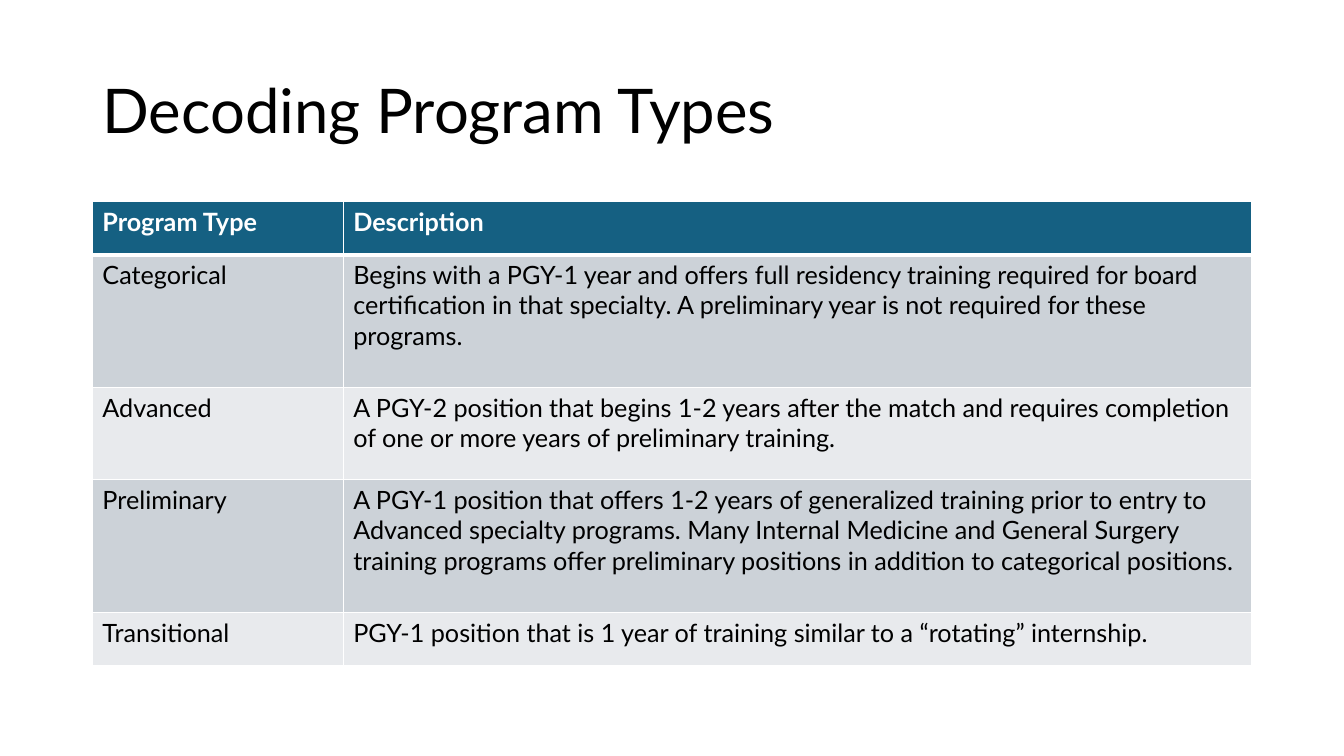
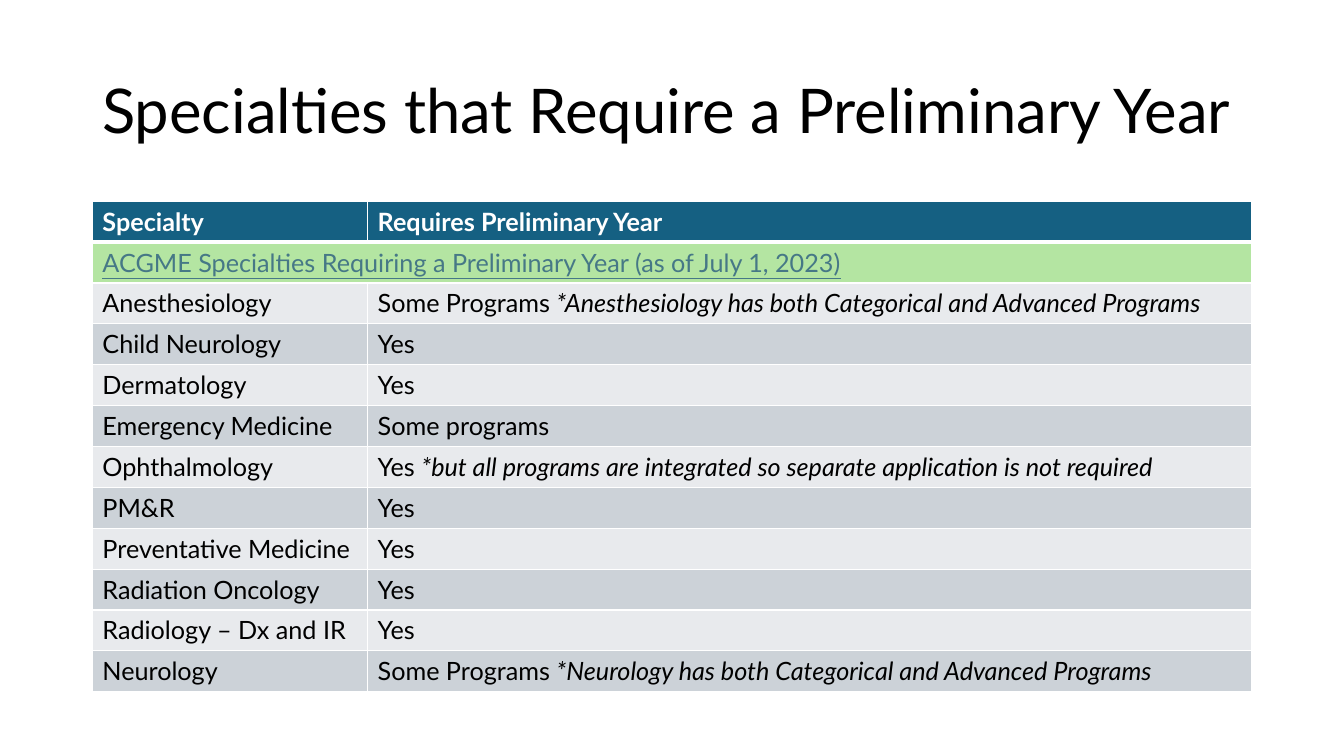
from dataclasses import dataclass

from lxml import etree
from pptx import Presentation
from pptx import util as u
from pptx.dml.color import RGBColor
from pptx.enum import text
from pptx.oxml import ns

BLACK = RGBColor(0x00, 0x00, 0x00)
WHITE = RGBColor(0xFF, 0xFF, 0xFF)
HEADER_BLUE = RGBColor(0x15, 0x60, 0x82)
BAND_DARK = RGBColor(0xCC, 0xD2, 0xD8)
BAND_LIGHT = RGBColor(0xE8, 0xEA, 0xED)
NOTE_GREEN = RGBColor(0xB4, 0xE5, 0xA2)
LINK_TEAL = RGBColor(0x46, 0x78, 0x86)

FONT = "Lato"
LEFT, WIDTH = 66, 828
TITLE_TOP, TITLE_HEIGHT = 28.75, 104.4
TABLE_TOP = 143.75
THIN, THICK = 1, 3

TITLE_STYLE = {"name": FONT, "size": u.Pt(44)}
BODY_STYLE = {"name": FONT, "size": u.Pt(18), "bold": False}
HEADER_STYLE = BODY_STYLE | {"bold": True}
LINK_STYLE = BODY_STYLE | {"underline": True}


@dataclass(frozen=True)
class TableSlide:
    """A titled table; a row with a single text spans all columns."""
    title: str
    first_column: float
    row_heights: list[float]
    rows: list[tuple[str, ...]]


PROGRAM_TYPES = TableSlide(
    "Decoding Program Types", 179.2, [38.2, 94.6, 66.2, 94.6, 38.2],
    [
        ("Program Type", "Description"),
        ("Categorical",
         "Begins with a PGY-1 year and offers full residency training required for board "
         "certification in that specialty. A preliminary year is not required for these "
         "programs."),
        ("Advanced",
         "A PGY-2 position that begins 1-2 years after the match and requires completion "
         "of one or more years of preliminary training."),
        ("Preliminary",
         "A PGY-1 position that offers 1-2 years of generalized training prior to entry to "
         "Advanced specialty programs. Many Internal Medicine and General Surgery "
         "training programs offer preliminary positions in addition to categorical positions."),
        ("Transitional",
         "PGY-1 position that is 1 year of training similar to a “rotating” internship."),
    ])

SPECIALTIES = TableSlide(
    "Specialties that Require a Preliminary Year", 196.6, [29.2] * 12,
    [
        ("Specialty", "Requires Preliminary Year"),
        ("ACGME Specialties Requiring a Preliminary Year (as of July 1, 2023)",),
        ("Anesthesiology",
         "Some Programs *Anesthesiology has both Categorical and Advanced Programs"),
        ("Child Neurology", "Yes"),
        ("Dermatology", "Yes"),
        ("Emergency Medicine", "Some programs"),
        ("Ophthalmology",
         "Yes *but all programs are integrated so separate application is not required"),
        ("PM&R", "Yes"),
        ("Preventative Medicine", "Yes"),
        ("Radiation Oncology", "Yes"),
        ("Radiology – Dx and IR", "Yes"),
        ("Neurology", "Some Programs *Neurology has both Categorical and Advanced Programs"),
    ])


def add_run(paragraph, words: str, style: dict, color: RGBColor, italic: bool = False) -> None:
    run = paragraph.add_run()
    run.text = words
    for name, value in (style | {"italic": italic}).items():
        setattr(run.font, name, value)
    run.font.color.rgb = color


def add_title(slide, title: str) -> None:
    box = slide.shapes.add_textbox(
        u.Pt(LEFT), u.Pt(TITLE_TOP), u.Pt(WIDTH), u.Pt(TITLE_HEIGHT))
    frame = box.text_frame
    frame.word_wrap = True
    frame.vertical_anchor = text.MSO_ANCHOR.MIDDLE
    paragraph = frame.paragraphs[0]
    paragraph.line_spacing = 0.9
    add_run(paragraph, title, TITLE_STYLE, BLACK)


def set_borders(cell, top: float, bottom: float) -> None:
    properties = cell._tc.get_or_add_tcPr()
    for side, width in {"L": THIN, "R": THIN, "T": top, "B": bottom}.items():
        line = etree.SubElement(properties, ns.qn(f"a:ln{side}"), w=str(u.Pt(width)))
        fill = etree.SubElement(line, ns.qn("a:solidFill"))
        etree.SubElement(fill, ns.qn("a:srgbClr"), val=str(WHITE))


def row_look(index: int, spans: bool) -> tuple[RGBColor, RGBColor, dict]:
    """Return fill, text colour and font style of a row."""
    if index == 0:
        return HEADER_BLUE, WHITE, HEADER_STYLE
    if spans:
        return NOTE_GREEN, LINK_TEAL, LINK_STYLE
    return (BAND_DARK if index % 2 else BAND_LIGHT), BLACK, BODY_STYLE


def add_table(slide, content: TableSlide) -> None:
    table = slide.shapes.add_table(
        len(content.rows), 2, u.Pt(LEFT), u.Pt(TABLE_TOP),
        u.Pt(WIDTH), u.Pt(sum(content.row_heights))).table
    table.horz_banding = False
    table.columns[0].width = u.Pt(content.first_column)
    table.columns[1].width = u.Pt(WIDTH - content.first_column)
    for index, (height, texts) in enumerate(zip(content.row_heights, content.rows)):
        row = table.rows[index]
        row.height = u.Pt(height)
        spans = len(texts) == 1
        fill, color, style = row_look(index, spans)
        for cell in row.cells:
            set_borders(cell, THICK if index == 1 else THIN, THICK if index == 0 else THIN)
            cell.fill.solid()
            cell.fill.fore_color.rgb = fill
        if spans:
            row.cells[0].merge(row.cells[1])
        for cell, words in zip(row.cells, texts):
            paragraph = cell.text_frame.paragraphs[0]
            plain, star, remark = words.partition("*")
            add_run(paragraph, plain, style, color)
            if star:
                add_run(paragraph, star + remark, style, color, italic=True)


def main() -> None:
    presentation = Presentation()
    presentation.slide_width, presentation.slide_height = u.Pt(960), u.Pt(540)
    for content in (PROGRAM_TYPES, SPECIALTIES):
        slide = presentation.slides.add_slide(presentation.slide_layouts[6])
        add_title(slide, content.title)
        add_table(slide, content)
    presentation.save("out.pptx")


if __name__ == "__main__":
    main()
